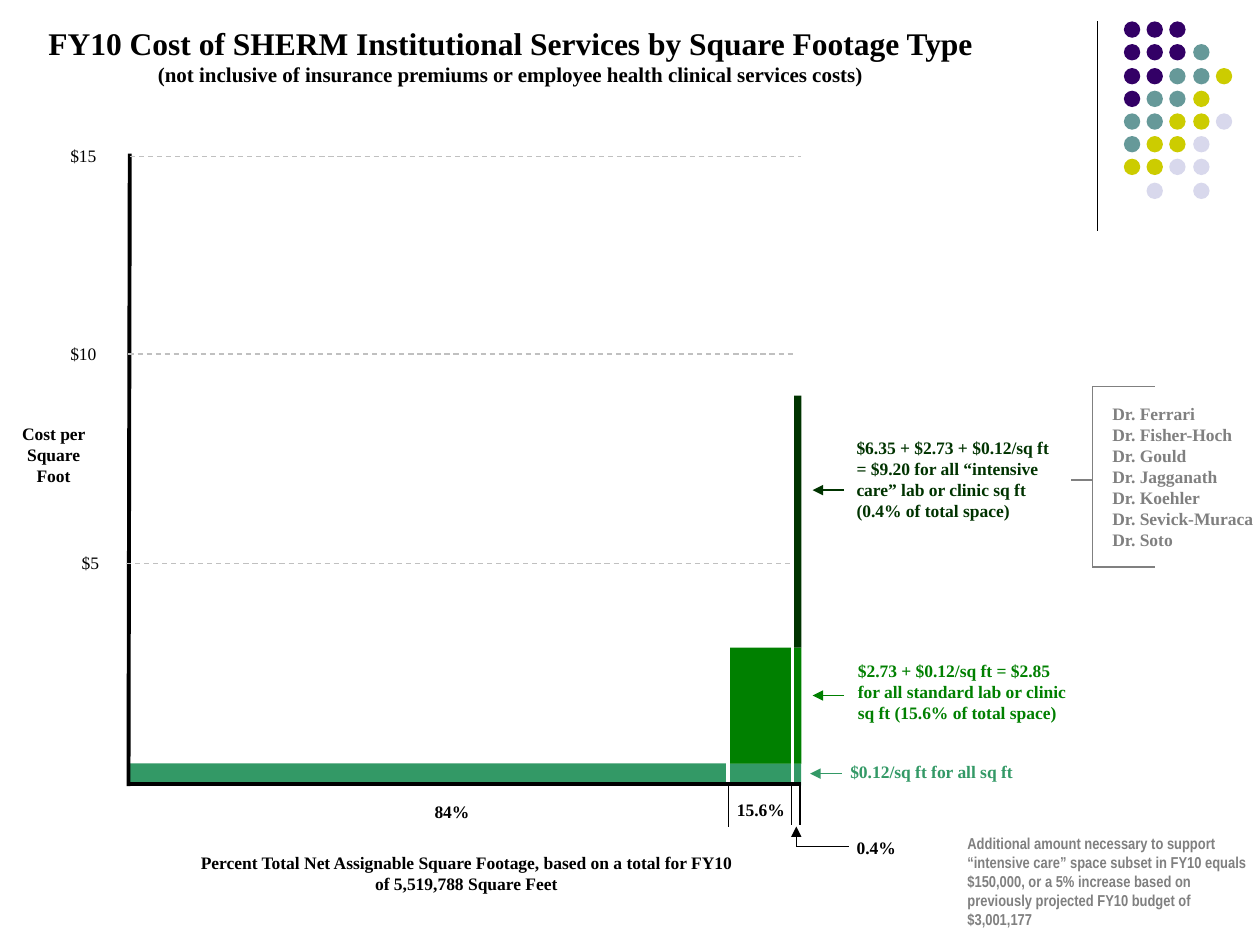
import pptx
import pptx.util
import pptx.dml.color
import pptx.enum.dml
import pptx.enum.shapes
import pptx.enum.text
from lxml import etree

EMU_PER_PX = 9144  # 100 px to the inch
BLACK, WHITE, GREY, GRID = "000000", "FFFFFF", "808080", "C0C0C0"
BASE, STANDARD, INTENSIVE = "339966", "008000", "003300"
DOT_COLORS = {"P": "330066", "T": "669999", "Y": "CCCC00", "L": "D8D8EC"}
DOT_ROWS = ["PPP", "PPPT", "PPTTY", "PTTY", "TTYYL", "TYYL", "YYLL", " L L"]


def px(length):
    return pptx.util.Emu(length * EMU_PER_PX)


def rgb(color):
    return pptx.dml.color.RGBColor.from_string(color)


class SlidePainter:
    font = "Times New Roman"
    text_size = 10
    line_width = 0.75

    def __init__(self, slide):
        self.slide = slide

    def shape(self, kind, left, top, width, height, color):
        shape = self.slide.shapes.add_shape(
            kind, px(left), px(top), px(width), px(height))
        shape.shadow.inherit = False
        shape.fill.solid()
        shape.fill.fore_color.rgb = rgb(color)
        shape.line.fill.background()

    def bar(self, left, top, width, height, color):
        self.shape(pptx.enum.shapes.MSO_SHAPE.RECTANGLE,
                   left, top, width, height, color)

    def dot(self, left, top, color):
        self.shape(pptx.enum.shapes.MSO_SHAPE.OVAL, left, top, 13, 13, color)

    def line(self, x1, y1, x2, y2, color=BLACK, width=None, dashed=False, arrow=False):
        line = self.slide.shapes.add_connector(
            pptx.enum.shapes.MSO_CONNECTOR.STRAIGHT, px(x1), px(y1), px(x2), px(y2))
        line.line.color.rgb = rgb(color)
        line.line.width = pptx.util.Pt(width or self.line_width)
        if dashed:
            line.line.dash_style = pptx.enum.dml.MSO_LINE.DASH
        namespace = "{http://schemas.openxmlformats.org/drawingml/2006/main}"
        if arrow:
            etree.SubElement(line.line._get_or_add_ln(),
                             namespace + "tailEnd", type="triangle")
        etree.SubElement(line._element.spPr, namespace + "effectLst")

    def text(self, left, top, width, height, *lines, color=BLACK, sizes=None,
             font=None, bold=True, centered=False, wrap=True):
        box = self.slide.shapes.add_textbox(px(left), px(top), px(width), px(height))
        frame = box.text_frame
        frame.word_wrap = wrap
        frame.auto_size = pptx.enum.text.MSO_AUTO_SIZE.SHAPE_TO_FIT_TEXT
        frame.text = "\n".join(lines)
        sizes = sizes or [self.text_size] * len(lines)
        for paragraph, size in zip(frame.paragraphs, sizes):
            paragraph.font.name = font or self.font
            paragraph.font.size = pptx.util.Pt(size)
            paragraph.font.bold = bold
            paragraph.font.color.rgb = rgb(color)
            if centered:
                paragraph.alignment = pptx.enum.text.PP_ALIGN.CENTER


def main():
    deck = pptx.Presentation()
    deck.slide_width, deck.slide_height = px(1000), px(750)
    painter = SlidePainter(deck.slides.add_slide(deck.slide_layouts[6]))

    # Corner decoration
    painter.line(871, 17, 871, 183)
    for row, codes in enumerate(DOT_ROWS):
        for column, code in enumerate(codes):
            if code in DOT_COLORS:
                painter.dot(round(892 + 18.25 * column), round(17 + 18.25 * row),
                            DOT_COLORS[code])

    # Cost bars, axes and the gaps between space types
    painter.bar(103, 606, 533, 17, BASE)
    painter.bar(578, 514, 58, 92, STANDARD)
    painter.bar(628, 314, 8, 200, INTENSIVE)
    painter.line(103, 122, 102, 624, width=2.25)
    painter.line(636, 622, 103, 622, width=2.25)
    for x, top in ((578, 512), (629, 262)):
        painter.line(x, top, x, 621, WHITE, width=2.25)

    # Axis titles
    painter.text(145, 671, 450, 43,
                 "Percent Total Net Assignable Square Footage, based on a total "
                 "for FY10 of 5,519,788 Square Feet", centered=True)
    painter.text(4, 331, 77, 60, "Cost per Square Foot", centered=True)

    # Cost notes with arrows to their bars
    painter.text(665, 599, 152, 27, "$0.12/sq ft for all sq ft", color=BASE, wrap=False)
    painter.text(671, 519, 192, 60,
                 "$2.73 + $0.12/sq ft = $2.85 for all standard lab or clinic sq ft "
                 "(15.6% of total space)", color=STANDARD)
    painter.text(670, 342, 176, 77,
                 "$6.35 + $2.73 + $0.12/sq ft = $9.20 for all “intensive care” lab "
                 "or clinic sq ft (0.4% of total space)", color=INTENSIVE)
    for x, y, color in ((670, 389, INTENSIVE), (670, 552, STANDARD), (668, 614, BASE)):
        painter.line(x, y, x - 25, y, color, arrow=True)

    # Cost gridlines and labels
    for label, left, width, y, start, end in (("$5", 55, 35, 447, 100, 629),
                                              ("$10", 46, 43, 281, 102, 629),
                                              ("$15", 46, 43, 124, 103, 636)):
        painter.line(start, y, end, y, GRID, dashed=True)
        painter.text(left, y - 14, width, 27, label, bold=False, wrap=False)

    # Shares of square footage
    for x, top in ((578, 622), (628, 621), (635, 621)):
        painter.line(x, top, x, top + 34)
    for share, left, top, width in (("84%", 335, 631, 48), ("15.6%", 575, 629, 59),
                                    ("0.4%", 670, 659, 52)):
        painter.text(left, top, width, 27, share, wrap=False)
    painter.line(632, 672, 632, 656, arrow=True)
    painter.line(632, 672, 674, 672)

    # Title
    painter.text(25, 14, 761, 61,
                 "FY10 Cost of SHERM Institutional Services by Square Footage Type",
                 "(not inclusive of insurance premiums or employee health clinical "
                 "services costs)", sizes=[18, 12], centered=True, wrap=False)

    # Bracketed list of intensive care users
    painter.line(867, 307, 867, 450, GREY)
    for y, end in ((307, 917), (450, 917), (381, 850)):
        painter.line(867, y, end, y, GREY)
    painter.text(873, 315, 135, 143, "Dr. Ferrari", "Dr. Fisher-Hoch", "Dr. Gould",
                 "Dr. Jagganath", "Dr. Koehler", "Dr. Sevick-Muraca", "Dr. Soto",
                 color=GREY)

    # Budget note
    painter.text(758, 657, 246, 86,
                 "Additional amount necessary to support “intensive care” space subset "
                 "in FY10 equals $150,000, or a 5% increase based on previously "
                 "projected FY10 budget of $3,001,177",
                 color=GREY, sizes=[9], font="Arial Narrow")

    deck.save("out.pptx")


if __name__ == "__main__":
    main()
